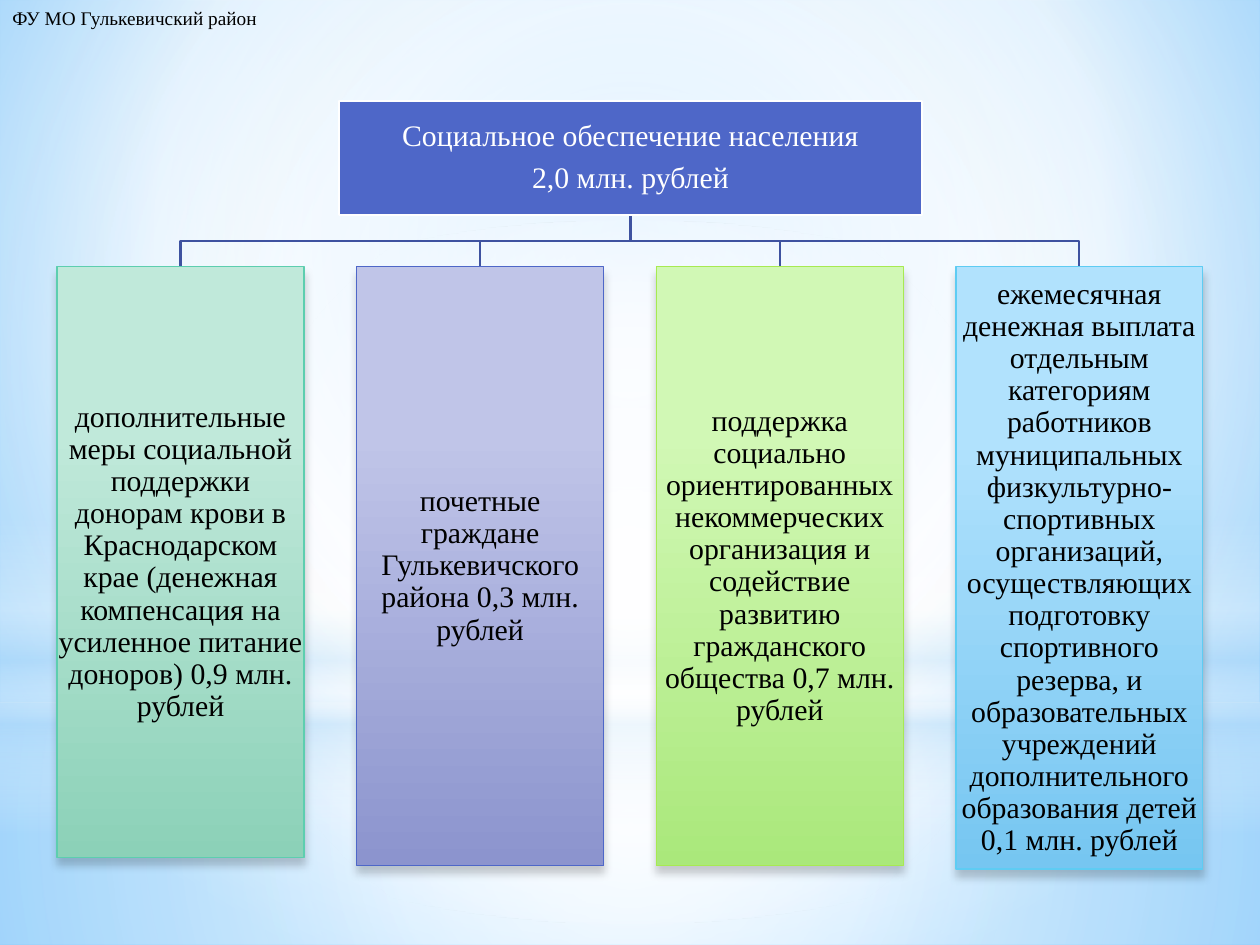
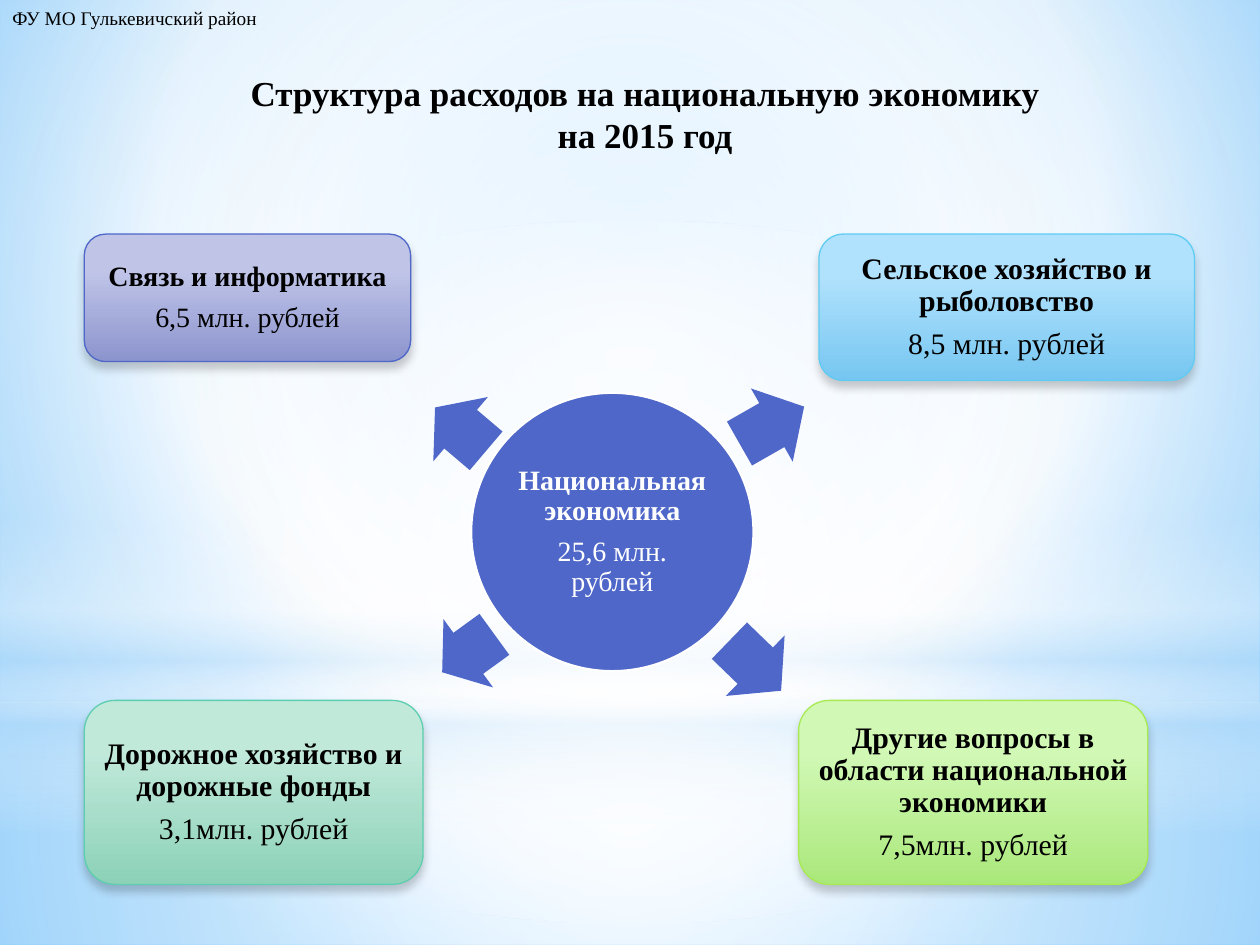
import lxml.etree
import pptx
import pptx.dml.color
import pptx.enum.shapes
import pptx.enum.text
import pptx.oxml.ns
import pptx.util

Cm = pptx.util.Cm
Pt = pptx.util.Pt
SHAPE = pptx.enum.shapes.MSO_SHAPE
ALIGN = pptx.enum.text.PP_ALIGN
qn = pptx.oxml.ns.qn

WIDTH, HEIGHT = 25.4, 19.05
FONT = "Times New Roman"
COLORS = {
    "black": "000000", "white": "FFFFFF", "blue": "4E67C8", "branch": "3E52A0",
    "haze": "B4DCFA", "sky": "9ED5FF", "deep_sky": "5BB9FF",
}
PALETTES = {
    "green": {"top": "C0E9DA", "bottom": "8CD1B8", "edge": "5DCEAF"},
    "violet": {"top": "C0C5E8", "bottom": "8C94CE", "edge": "4E67C8"},
    "lime": {"top": "D1F8B5", "bottom": "AAE87B", "edge": "A7EA52"},
    "cyan": {"top": "B1E2FD", "bottom": "76C6F1", "edge": "5ECCF3"},
}

CENTER = (50, 50, 50, 50)
BACKGROUND = [(0, "sky", 100), (60, "white", 100), (100, "deep_sky", 100)]
BANDS = [
    (SHAPE.RECTANGLE, (0, 14.17, WIDTH, 4.88), CENTER,
     [(0, "white", 91), (37, "white", 76), (100, "haze", 79)]),
    (SHAPE.RECTANGLE, (0, 0, WIDTH, 14.17), CENTER,
     [(0, "white", 89), (48, "white", 62), (100, "haze", 79)]),
    (SHAPE.RECTANGLE, (0, 10.46, WIDTH, 6.35), None,
     [(0, "white", 0), (29, "white", 30), (45, "haze", 40),
      (55, "white", 26), (65, "haze", 60), (100, "white", 0)]),
    (SHAPE.OVAL, (0, 4.45, WIDTH, 14.17), CENTER,
     [(0, "white", 100), (56, "white", 0)]),
]
HEADER = "ФУ МО Гулькевичский район"

SOCIAL_TOTAL = ["Социальное обеспечение населения", "2,0 млн. рублей"]
SOCIAL_BOX = (6.83, 2.03, 11.76, 2.31)
COLUMN_TOP, COLUMN_WIDTH, COLUMN_PITCH = 5.38, 4.98, 6.04
SOCIAL_ITEMS = [
    ("green", 11.91, "дополнительные меры социальной поддержки донорам крови в "
     "Краснодарском крае (денежная компенсация на усиленное питание доноров) "
     "0,9 млн. рублей"),
    ("violet", 12.07, "почетные граждане Гулькевичского района 0,3 млн. рублей"),
    ("lime", 12.07, "поддержка социально ориентированных некоммерческих организация "
     "и содействие развитию гражданского общества 0,7 млн. рублей"),
    ("cyan", 12.14, "ежемесячная денежная выплата отдельным категориям работников "
     "муниципальных физкультурно-спортивных организаций, осуществляющих подготовку "
     "спортивного резерва, и образовательных учреждений дополнительного образования "
     "детей 0,1 млн. рублей"),
]

ECONOMY_TITLE = ["Структура расходов на национальную экономику", "на 2015 год"]
ECONOMY_TOTAL = ["Национальная экономика", "25,6 млн. рублей"]
ECONOMY_ITEMS = [
    {"lines": ["Связь и информатика", "6,5 млн. рублей"], "palette": "violet",
     "size": 16, "box": (1.7, 4.72, 6.58, 2.57),
     "arrow": (8.61, 7.8, 1.35, 1.7), "angle": 220.3},
    {"lines": ["Сельское хозяйство и рыболовство", "8,5 млн. рублей"], "palette": "cyan",
     "size": 17, "box": (16.51, 4.72, 7.57, 2.95),
     "arrow": (14.81, 7.72, 1.5, 1.7), "angle": 330.3},
    {"lines": ["Другие вопросы в области национальной экономики", "7,5млн. рублей"],
     "palette": "lime", "size": 17, "box": (16.1, 14.12, 7.04, 3.71),
     "arrow": (14.5, 12.57, 1.45, 1.7), "angle": 44.1},
    {"lines": ["Дорожное хозяйство и дорожные фонды", "3,1млн. рублей"],
     "palette": "green", "size": 17, "box": (1.7, 14.12, 6.83, 3.71),
     "arrow": (8.79, 12.32, 1.3, 1.7), "angle": 144},
]


def rgb(value):
    return pptx.dml.color.RGBColor.from_string(value)


def child(parent, tag, **attrs):
    return lxml.etree.SubElement(parent, qn(tag), {k: str(v) for k, v in attrs.items()})


def color_node(parent, value, alpha):
    child(child(parent, "a:srgbClr", val=value), "a:alpha", val=alpha * 1000)


def set_gradient(fill, element, stops, focus=None):
    fill.gradient()
    grad = element.find(".//" + qn("a:gradFill"))
    grad.clear()
    grad.set("rotWithShape", "1")
    stop_list = child(grad, "a:gsLst")
    for pos, value, alpha in stops:
        color_node(child(stop_list, "a:gs", pos=pos * 1000), value, alpha)
    if focus:
        sides = {side: v * 1000 for side, v in zip("ltrb", focus)}
        child(child(grad, "a:path", path="circle"), "a:fillToRect", **sides)
    else:
        child(grad, "a:lin", ang=5400000, scaled=0)


def named_stops(stops):
    return [(pos, COLORS[name], alpha) for pos, name, alpha in stops]


def add_shape(slide, kind, box, fill=None, edge=None, weight=1.25):
    sp = slide.shapes.add_shape(kind, *map(Cm, box))
    sp.shadow.inherit = False
    if fill:
        sp.fill.solid()
        sp.fill.fore_color.rgb = rgb(fill)
    if edge:
        sp.line.color.rgb = rgb(edge)
        sp.line.width = Pt(weight)
    else:
        sp.line.fill.background()
    return sp


def add_card(slide, kind, box, palette):
    colors = PALETTES[palette]
    sp = add_shape(slide, kind, box, edge=colors["edge"], weight=0.75)
    stops = [(28, colors["top"], 100), (100, colors["bottom"], 100)]
    set_gradient(sp.fill, sp.element, stops)
    effects = sp.element.spPr.find(qn("a:effectLst"))
    shadow = child(effects, "a:outerShdw", blurRad=Pt(5), dist=Pt(4), dir=5400000,
                   rotWithShape=0)
    color_node(shadow, COLORS["black"], 20)
    return sp


def write(sp, lines, size=17, color="black", bold_lines=0, align=ALIGN.CENTER,
          margin=None, compact=True, wrap=True):
    tf = sp.text_frame
    tf.word_wrap = wrap
    if margin is not None:
        tf.margin_left = tf.margin_right = tf.margin_top = tf.margin_bottom = Cm(margin)
        tf.vertical_anchor = pptx.enum.text.MSO_ANCHOR.MIDDLE
    for i, line in enumerate(lines):
        p = tf.add_paragraph() if i else tf.paragraphs[0]
        p.alignment = align
        if compact:
            p.line_spacing = 0.9
            p.space_after = Pt(round(size * 0.35))
        r = p.add_run()
        r.text = line
        r.font.name = FONT
        r.font.size = Pt(size)
        r.font.bold = i < bold_lines
        r.font.color.rgb = rgb(COLORS[color])


def add_label(slide, box, lines, **fmt):
    sp = slide.shapes.add_textbox(*map(Cm, box))
    write(sp, lines, compact=False, **fmt)
    sp.text_frame.auto_size = pptx.enum.text.MSO_AUTO_SIZE.SHAPE_TO_FIT_TEXT


def add_branch(slide, points):
    (x, y), *rest = [(Cm(px), Cm(py)) for px, py in points]
    builder = slide.shapes.build_freeform(x, y)
    builder.add_line_segments(rest, close=False)
    sp = builder.convert_to_shape()
    sp.shadow.inherit = False
    sp.fill.background()
    sp.line.color.rgb = rgb(COLORS["branch"])
    sp.line.width = Pt(1.25)


def new_slide(prs):
    slide = prs.slides.add_slide(prs.slide_layouts[6])
    set_gradient(slide.background.fill, slide.element, named_stops(BACKGROUND),
                 (20, 10, 20, 60))
    for kind, box, focus, stops in BANDS:
        sp = add_shape(slide, kind, box)
        set_gradient(sp.fill, sp.element, named_stops(stops), focus)
    add_label(slide, (0, 0, 5.72, 0.74), [HEADER], size=11, align=ALIGN.LEFT, wrap=False)
    return slide


def build_social(prs):
    slide = new_slide(prs)
    left, top, width, height = SOCIAL_BOX
    trunk_x, trunk_y = left + width / 2, top + height
    bend_y = (trunk_y + COLUMN_TOP) / 2
    first = (WIDTH - COLUMN_PITCH * (len(SOCIAL_ITEMS) - 1) - COLUMN_WIDTH) / 2
    columns = [first + i * COLUMN_PITCH for i in range(len(SOCIAL_ITEMS))]
    for x in columns:
        drop_x = x + COLUMN_WIDTH / 2
        add_branch(slide, [(trunk_x, trunk_y), (trunk_x, bend_y),
                           (drop_x, bend_y), (drop_x, COLUMN_TOP)])
    sp = add_shape(slide, SHAPE.RECTANGLE, SOCIAL_BOX, COLORS["blue"], COLORS["white"])
    write(sp, SOCIAL_TOTAL, color="white", margin=0.03)
    for x, (palette, column_height, text) in zip(columns, SOCIAL_ITEMS):
        box = (x, COLUMN_TOP, COLUMN_WIDTH, column_height)
        write(add_card(slide, SHAPE.RECTANGLE, box, palette), [text], margin=0.03)


def build_economy(prs):
    slide = new_slide(prs)
    sp = add_shape(slide, SHAPE.OVAL, (9.5, 7.92, 5.69, 5.61),
                   COLORS["blue"], COLORS["white"])
    write(sp, ECONOMY_TOTAL, size=16, color="white", bold_lines=1, margin=0.05)
    for item in ECONOMY_ITEMS:
        arrow = add_shape(slide, SHAPE.RIGHT_ARROW, item["arrow"], COLORS["blue"])
        arrow.adjustments[0] = 0.6
        arrow.adjustments[1] = 0.5
        arrow.rotation = item["angle"]
        card = add_card(slide, SHAPE.ROUNDED_RECTANGLE, item["box"], item["palette"])
        write(card, item["lines"], size=item["size"], bold_lines=1, margin=0.05)
    add_label(slide, (3.3, 1.32, 19.41, 1.96), ECONOMY_TITLE, size=20, bold_lines=2)


def main():
    prs = pptx.Presentation()
    prs.slide_width, prs.slide_height = Cm(WIDTH), Cm(HEIGHT)
    build_social(prs)
    build_economy(prs)
    prs.save("out.pptx")


if __name__ == "__main__":
    main()
